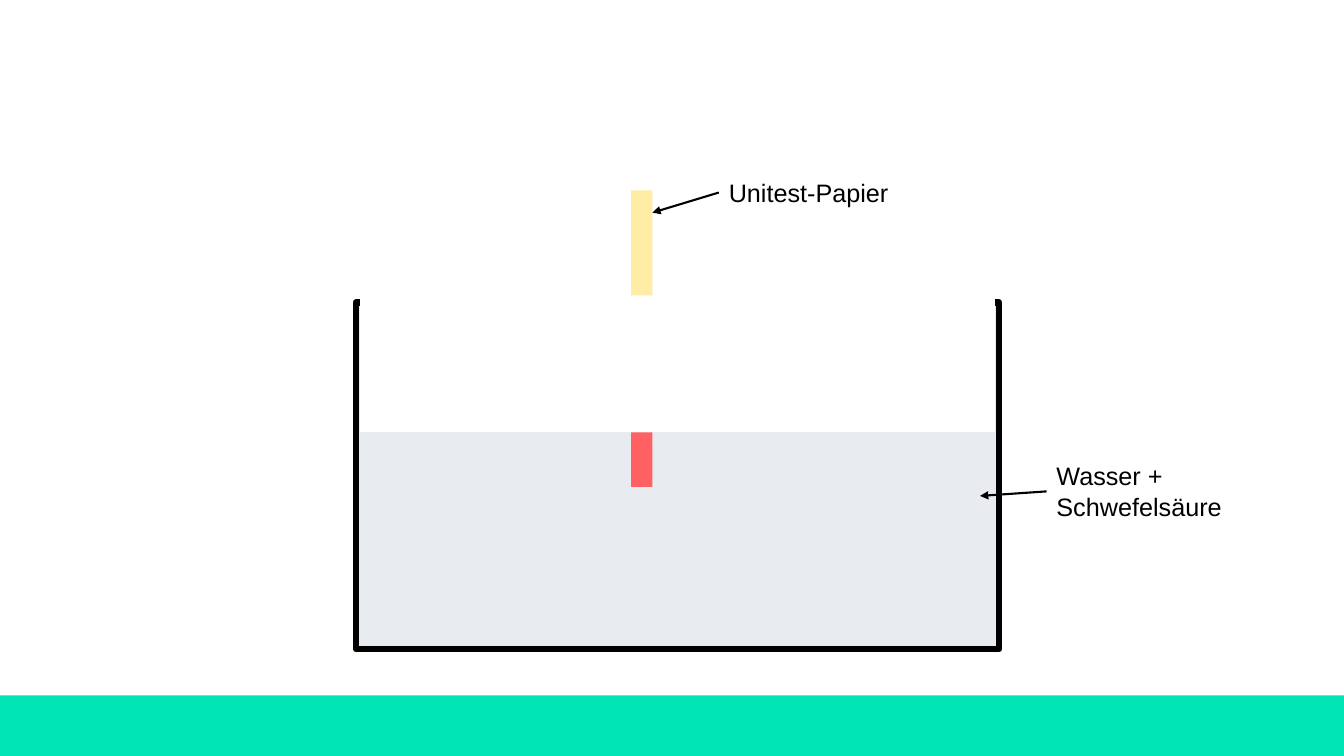
from dataclasses import dataclass
from lxml.etree import SubElement
from pptx import Presentation
from pptx.dml.color import RGBColor
from pptx.enum.shapes import MSO_CONNECTOR, MSO_SHAPE
from pptx.enum.text import MSO_AUTO_SIZE
from pptx.oxml.ns import qn
from pptx.util import Pt

SCALE = 9144
WIDE, HIGH = 1333, 750


@dataclass(frozen=True)
class Theme:
    font: str = "Arial"
    size: int = 18
    ink: str = "000000"
    paper: str = "FFFFFF"
    band: str = "00E5B6"
    water: str = "E8EBF0"
    dry: str = "FFEDA5"
    wet: str = "FF6162"
    wall: float = 4.5
    rim: float = 1
    arrow: float = 1.5


THEME = Theme()


def px(*sizes):
    return [size * SCALE for size in sizes]


def color(code):
    return RGBColor.from_string(code)


def block(slide, box, fill, line=None, width=0):
    shape = slide.shapes.add_shape(MSO_SHAPE.RECTANGLE, *px(*box))
    shape.shadow.inherit = False
    shape.fill.solid()
    shape.fill.fore_color.rgb = color(fill)
    if line:
        shape.line.color.rgb = color(line)
        shape.line.width = Pt(width)
    else:
        shape.line.fill.background()
    return shape


def beaker(slide, box):
    left, top, width, height = box
    block(slide, box, THEME.water, THEME.ink, THEME.wall)
    cover = (left + 5, top - 216, width - 10, height)
    block(slide, cover, THEME.paper, THEME.paper, THEME.rim)


def label(slide, box, text, tip):
    note = slide.shapes.add_textbox(*px(*box))
    frame = note.text_frame
    frame.word_wrap = True
    frame.auto_size = MSO_AUTO_SIZE.SHAPE_TO_FIT_TEXT
    frame.text = text
    font = frame.paragraphs[0].runs[0].font
    font.name = THEME.font
    font.size = Pt(THEME.size)
    font.color.rgb = color(THEME.ink)

    left, top, width, height = box
    start = (left, top + height // 2)
    arrow = slide.shapes.add_connector(MSO_CONNECTOR.STRAIGHT, *px(*start, *tip))
    arrow.begin_connect(note, 1)
    arrow.line.color.rgb = color(THEME.ink)
    arrow.line.width = Pt(THEME.arrow)
    SubElement(arrow.line._get_or_add_ln(), qn("a:tailEnd"), type="triangle")
    SubElement(arrow._element.spPr, qn("a:effectLst"))


def strip(slide, box, dip):
    left, top, width, height = box
    block(slide, box, THEME.dry)
    block(slide, (left, top + 240, width, dip), THEME.wet)


def main():
    deck = Presentation()
    deck.slide_width, deck.slide_height = px(WIDE, HIGH)
    slide = deck.slides.add_slide(deck.slide_layouts[6])
    slide.background.fill.solid()
    slide.background.fill.fore_color.rgb = color(THEME.paper)
    block(slide, (0, 690, WIDE, 60), THEME.band)
    beaker(slide, (353, 300, 638, 344))
    label(slide, (1038, 452, 184, 71), "Wasser + Schwefelsäure", (972, 492))
    strip(slide, (626, 189, 21, 104), 54)
    label(slide, (713, 171, 184, 40), "Unitest-Papier", (647, 211))
    deck.save("out.pptx")


if __name__ == "__main__":
    main()
